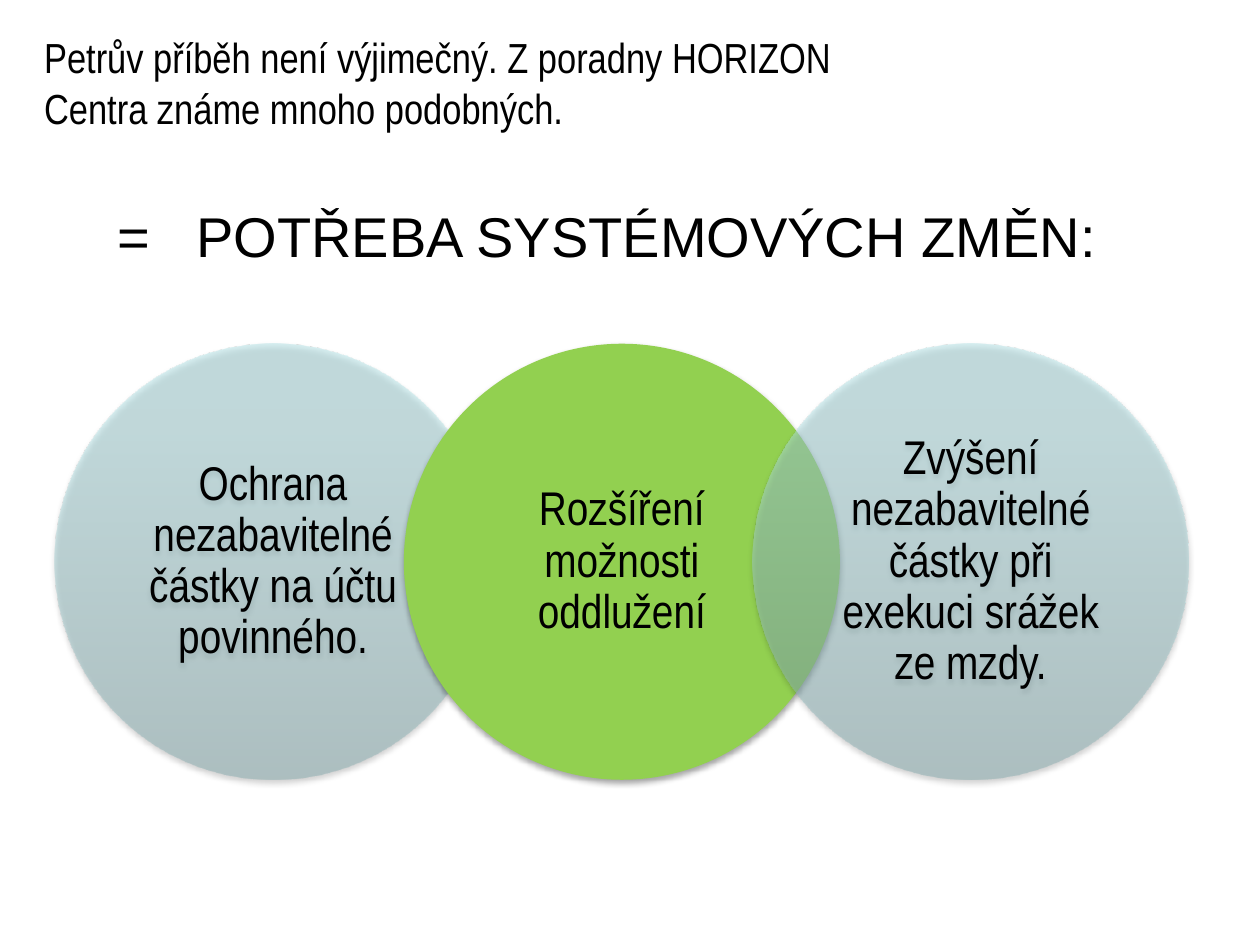
from lxml import etree
from pptx import Presentation
from pptx.dml.color import RGBColor
from pptx.enum import shapes, text
from pptx.oxml.ns import qn
from pptx.util import Cm, Pt

BLACK = "000000"
GREEN = "92D050"
TEAL_STOPS = [(0, "87ABAE"), (80, "AFDEE2"), (100, "AFE0E4")]
CHANGES = [
    ("Ochrana nezabavitelné částky na účtu povinného.", None),
    ("Rozšíření možnosti oddlužení", GREEN),
    ("Zvýšení nezabavitelné částky při exekuci srážek ze mzdy.", None),
]


def color(hex_string):
    return RGBColor.from_string(hex_string)


def add_color(parent, hex_string, opacity):
    rgb = etree.SubElement(parent, qn("a:srgbClr"), val=hex_string)
    etree.SubElement(rgb, qn("a:alpha"), val=str(opacity * 1000))


def set_font(paragraph, name, size):
    paragraph.font.name = name
    paragraph.font.size = Pt(size)
    paragraph.font.color.rgb = color(BLACK)


def set_insets(frame, horizontal, vertical):
    frame.margin_left = frame.margin_right = Cm(horizontal)
    frame.margin_top = frame.margin_bottom = Cm(vertical)


def fill_translucent_teal(circle):
    circle.fill.gradient()
    circle.fill.gradient_angle = 90
    stops = circle.element.spPr.find(qn("a:gradFill")).find(qn("a:gsLst"))
    for stop in list(stops):
        stops.remove(stop)
    for position, hex_string in TEAL_STOPS:
        stop = etree.SubElement(stops, qn("a:gs"), pos=str(position * 1000))
        add_color(stop, hex_string, 50)


def add_soft_shadow(circle):
    circle.shadow.inherit = False
    effects = circle.element.spPr.find(qn("a:effectLst"))
    shadow = etree.SubElement(
        effects, qn("a:outerShdw"), blurRad=str(Pt(3.1)), dist=str(Pt(1.8)),
        dir="5400000", rotWithShape="0")
    add_color(shadow, BLACK, 35)


def add_intro(slide, left, top, width, height):
    intro = slide.shapes.add_textbox(Cm(left), Cm(top), Cm(width), Cm(height))
    frame = intro.text_frame
    frame.word_wrap = True
    frame.vertical_anchor = text.MSO_ANCHOR.MIDDLE
    set_insets(frame, 0, 0)
    paragraph = frame.paragraphs[0]
    paragraph.text = ("Petrův příběh není výjimečný. Z poradny HORIZON "
                      "Centra známe mnoho podobných.")
    set_font(paragraph, "Arial Narrow", 24)


def add_conclusion(slide, left, top, width, height):
    """Place the equals sign, with the conclusion at a tab stop after it."""
    conclusion = slide.shapes.add_textbox(Cm(left), Cm(top), Cm(width), Cm(height))
    conclusion.text_frame.word_wrap = False
    paragraph = conclusion.text_frame.paragraphs[0]
    paragraph.text = "=\tPOTŘEBA SYSTÉMOVÝCH ZMĚN:"
    paragraph.alignment = text.PP_ALIGN.LEFT
    tabs = etree.SubElement(paragraph._p.get_or_add_pPr(), qn("a:tabLst"))
    etree.SubElement(tabs, qn("a:tab"), pos=str(Cm(1.6)), algn="l")
    set_font(paragraph, "Arial", 32)


def add_change_circles(slide, left, top, diameter):
    """Place a row of circles, each overlapping the one before by a fifth."""
    for index, (change, solid) in enumerate(CHANGES):
        circle = slide.shapes.add_shape(
            shapes.MSO_SHAPE.OVAL, Cm(left + index * 0.8 * diameter), Cm(top),
            Cm(diameter), Cm(diameter))
        if solid:
            circle.fill.solid()
            circle.fill.fore_color.rgb = color(solid)
        else:
            fill_translucent_teal(circle)
        circle.line.fill.background()
        add_soft_shadow(circle)

        frame = circle.text_frame
        frame.word_wrap = True
        frame.vertical_anchor = text.MSO_ANCHOR.MIDDLE
        set_insets(frame, 0.48, 0.1)
        paragraph = frame.paragraphs[0]
        paragraph.text = change
        paragraph.alignment = text.PP_ALIGN.CENTER
        paragraph.line_spacing = 0.9
        set_font(paragraph, "Arial Narrow", 27)


def main():
    presentation = Presentation()
    presentation.slide_width = Cm(25.4)
    presentation.slide_height = Cm(19.05)
    slide = presentation.slides.add_slide(presentation.slide_layouts[6])
    add_intro(slide, 0.89, 0.64, 17.2, 2.03)
    add_change_circles(slide, 1.11, 6.93, 8.79)
    add_conclusion(slide, 2.11, 3.94, 20.45, 1.63)
    presentation.save("out.pptx")


if __name__ == "__main__":
    main()
